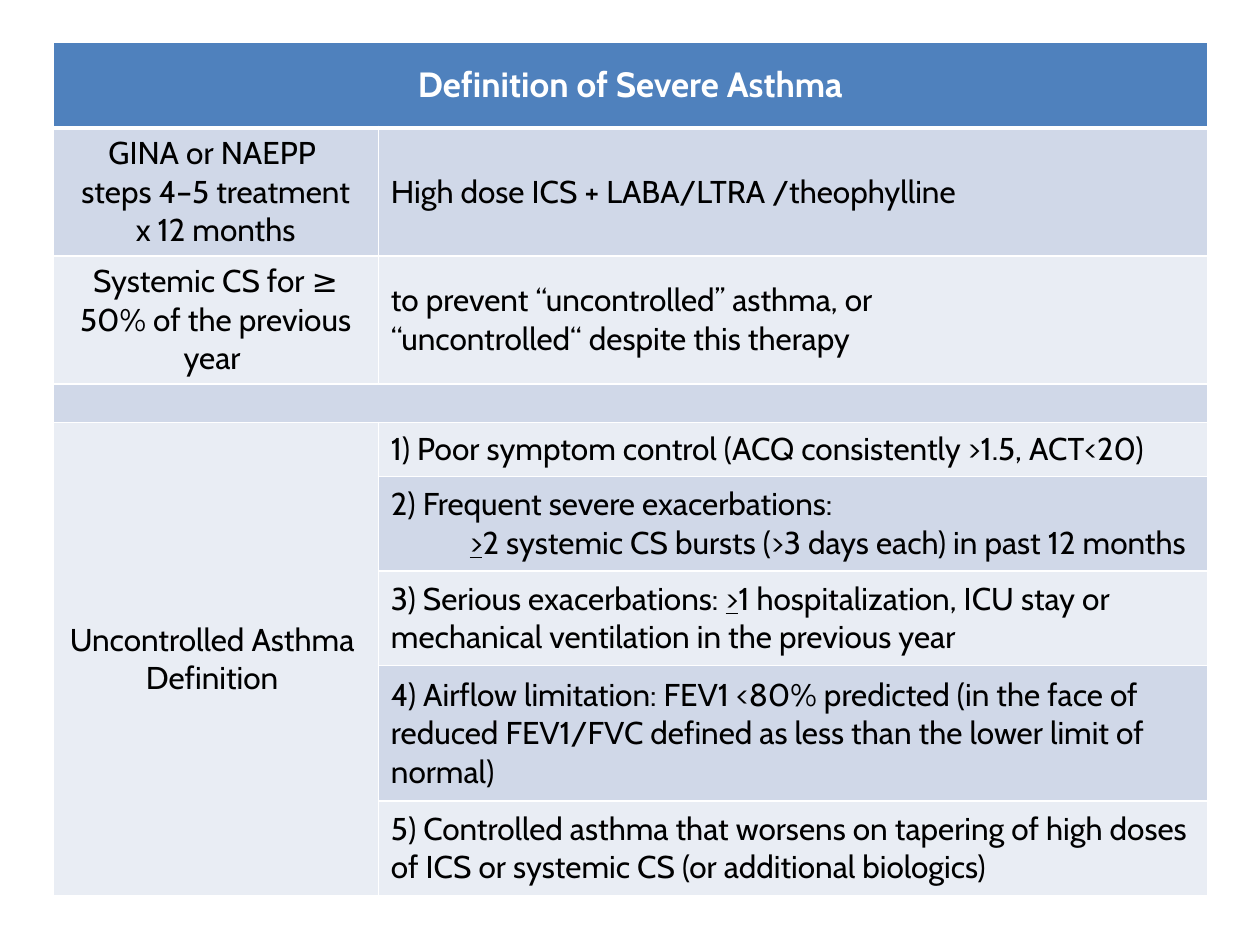
from pptx import Presentation
from pptx import util as u
from pptx.dml import color
from pptx.enum import text as t
from lxml import etree

NS = "http://schemas.openxmlformats.org/drawingml/2006/main"
WHITE, BLACK, BLUE = "FFFFFF", "000000", "4F81BD"
DARK, PALE = "D0D8E8", "E9EDF4"
MID = t.PP_ALIGN.CENTER
LEFT = t.PP_ALIGN.LEFT


def rgb(code):
    return color.RGBColor.from_string(code)


def write(para, words, font="Cabin", size=18, ink=BLACK, bold=False,
          align=LEFT, inset=0):
    """Fill a paragraph; a ">" between bars is underlined."""
    if inset:
        para._p.get_or_add_pPr().set("marL", str(u.Pt(inset)))
    para.alignment = align
    for i, part in enumerate(words.split("|")):
        if part:
            run = para.add_run()
            run.text = part
            run.font.name, run.font.size = font, u.Pt(size)
            run.font.bold, run.font.underline = bold, i % 2 == 1
            run.font.color.rgb = rgb(ink)


class Deck:
    def __init__(self, wide, high):
        self.prs = Presentation()
        self.prs.slide_width, self.prs.slide_height = u.Pt(wide), u.Pt(high)
        self.slide = self.prs.slides.add_slide(self.prs.slide_layouts[6])

    def table(self, left, top, cols, rows):
        grid = self.slide.shapes.add_table(
            len(rows), len(cols), u.Pt(left), u.Pt(top),
            u.Pt(sum(cols)), u.Pt(sum(rows))).table
        for col, size in zip(grid.columns, cols):
            col.width = u.Pt(size)
        for row, size in zip(grid.rows, rows):
            row.height = u.Pt(size)
        return grid

    def edge(self, cell, **widths):
        props = cell._tc.get_or_add_tcPr()
        for side in "LRTB":
            line = etree.SubElement(props, f"{{{NS}}}ln{side}",
                                    w=str(u.Pt(widths.get(side, 1))))
            fill = etree.SubElement(line, f"{{{NS}}}solidFill")
            etree.SubElement(fill, f"{{{NS}}}srgbClr", val=WHITE)

    def paint(self, cell, fill):
        cell.fill.solid()
        cell.fill.fore_color.rgb = rgb(fill)
        cell.vertical_anchor = t.MSO_ANCHOR.MIDDLE

    def fill(self, cell, lines, **form):
        """Write lines; a (words, inset) pair is an indented line."""
        frame = cell.text_frame
        for i, line in enumerate(lines):
            para = frame.add_paragraph() if i else frame.paragraphs[0]
            words, inset = line if isinstance(line, tuple) else (line, 0)
            write(para, words, inset=inset, **form)


# Left and right text of each row below the title
BODY = [
    (["GINA or NAEPP ", "steps 4–5 treatment", "x 12 months"],
     ["High dose ICS + LABA/LTRA /theophylline"]),
    (["Systemic CS for ≥ 50% of the previous year "],
     ["to prevent ‘‘uncontrolled’’ asthma, or",
      "‘‘uncontrolled‘‘ despite this therapy"]),
    ([], []),
    (["Uncontrolled Asthma ", "Definition "],
     ["1) Poor symptom control (ACQ consistently >1.5, ACT<20)"]),
    ([], ["2) Frequent severe exacerbations:",
          ("|>|2 systemic CS bursts (>3 days each) in past 12 months", 45)]),
    ([], ["3) Serious exacerbations: |>|1 hospitalization, ICU stay or "
          "mechanical ventilation in the previous year"]),
    ([], ["4) Airflow limitation: FEV1 <80% predicted (in the face of reduced "
          "FEV1/FVC defined as less than the lower limit of normal)"]),
    ([], ["5) Controlled asthma that worsens on tapering of high doses of ICS "
          "or systemic CS (or additional biologics)"]),
]


def main():
    deck = Deck(720, 540)
    grid = deck.table(30.25, 24.1, [186, 474],
                      [49, 54, 54, 11, 31, 54, 54, 77.5, 54])

    # Title row
    for cell in grid.rows[0].cells:
        deck.edge(cell, B=3)
        deck.paint(cell, BLUE)
    deck.fill(grid.cell(0, 0), ["Definition of Severe Asthma"],
              size=20, ink=WHITE, bold=True, align=MID)

    # Banded body rows
    for r, pair in enumerate(BODY, 1):
        for c, lines in enumerate(pair):
            cell = grid.cell(r, c)
            deck.edge(cell, T=3 if r == 1 else 1)
            deck.paint(cell, DARK if r % 2 else PALE)
            deck.fill(cell, lines, align=LEFT if c else MID)

    # Thin spacer row
    for cell in grid.rows[3].cells:
        cell.margin_top = cell.margin_bottom = 0

    # Merged cells
    for r in (0, 3):
        grid.cell(r, 0).merge(grid.cell(r, 1))
    grid.cell(4, 0).merge(grid.cell(8, 0))

    deck.prs.save("out.pptx")


if __name__ == "__main__":
    main()
